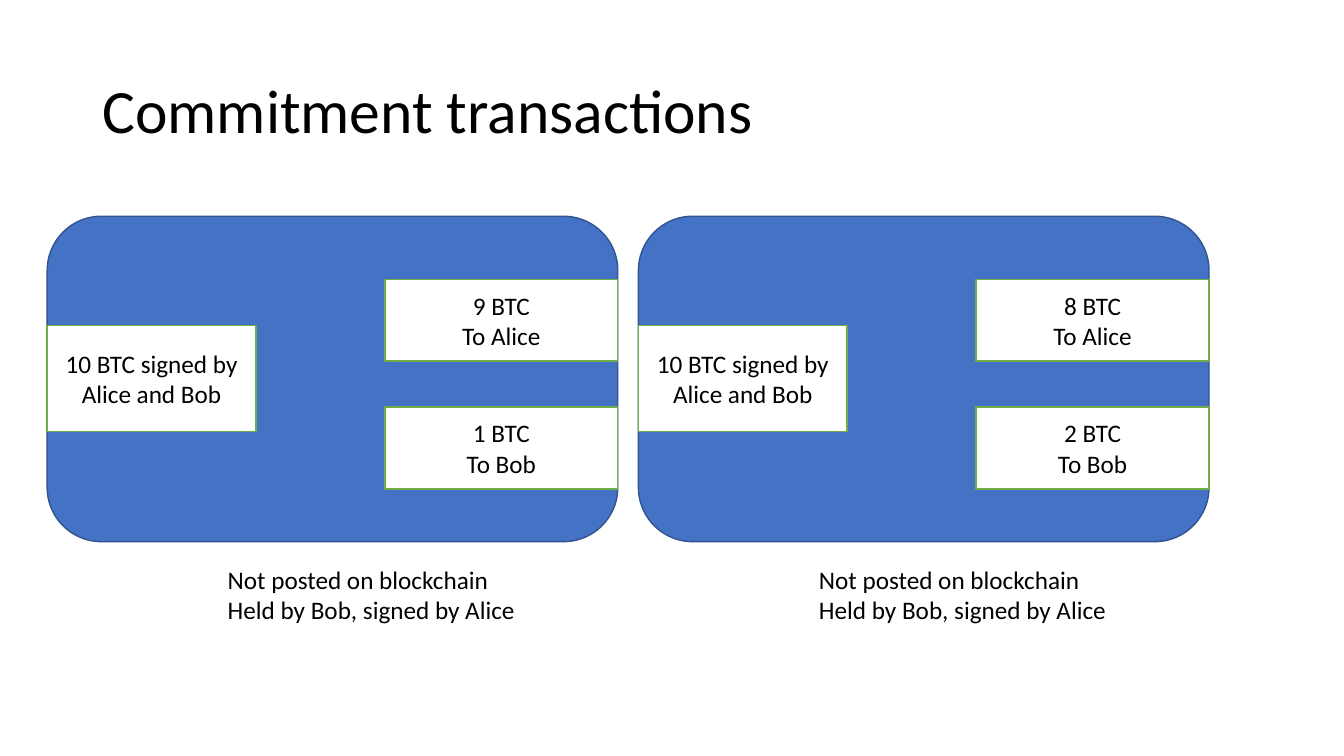
from pptx import Presentation
from pptx.dml.color import RGBColor
from pptx.enum.shapes import MSO_SHAPE as Shape
from pptx.enum.text import MSO_ANCHOR as Anchor, MSO_AUTO_SIZE as AutoSize, PP_ALIGN as Align
from pptx.util import Cm, Pt

BLACK = RGBColor(0x00, 0x00, 0x00)
WHITE = RGBColor(0xFF, 0xFF, 0xFF)
BLUE = RGBColor(0x44, 0x72, 0xC4)
DARK_BLUE = RGBColor(0x32, 0x54, 0x91)
GREEN = RGBColor(0x70, 0xAD, 0x47)


class SlideBuilder:
    """Holds the text style and the current slide."""

    font_name = "Calibri"
    text_size = Pt(18)
    title_size = Pt(44)

    def __init__(self, slide):
        self.slide = slide

    def set_text(self, frame, lines, size, align):
        frame.text = "\n".join(lines)
        for paragraph in frame.paragraphs:
            paragraph.alignment = align
            paragraph.font.name = self.font_name
            paragraph.font.size = size
            paragraph.font.color.rgb = BLACK

    def title(self, text, left, top, width, height):
        title = self.slide.shapes.title
        title.left, title.top, title.width, title.height = map(Cm, (left, top, width, height))
        frame = title.text_frame
        self.set_text(frame, [text], self.title_size, Align.LEFT)
        frame.vertical_anchor = Anchor.MIDDLE
        frame.paragraphs[0].line_spacing = 0.9

    def block(self, kind, fill, line, left, top, width, height):
        block = self.slide.shapes.add_shape(kind, Cm(left), Cm(top), Cm(width), Cm(height))
        block.shadow.inherit = False
        block.fill.solid()
        block.fill.fore_color.rgb = fill
        block.line.color.rgb = line
        block.line.width = Pt(1)
        return block

    def transaction(self, left, top, width, height):
        self.block(Shape.ROUNDED_RECTANGLE, BLUE, DARK_BLUE, left, top, width, height)

    def coin_box(self, lines, left, top, width, height):
        box = self.block(Shape.RECTANGLE, WHITE, GREEN, left, top, width, height)
        frame = box.text_frame
        frame.word_wrap = True
        frame.vertical_anchor = Anchor.MIDDLE
        self.set_text(frame, lines, self.text_size, Align.CENTER)

    def caption(self, lines, left, top, width, height):
        caption = self.slide.shapes.add_textbox(Cm(left), Cm(top), Cm(width), Cm(height))
        frame = caption.text_frame
        frame.word_wrap = False
        frame.auto_size = AutoSize.SHAPE_TO_FIT_TEXT
        self.set_text(frame, lines, self.text_size, Align.LEFT)


def main():
    deck = Presentation()
    deck.slide_width, deck.slide_height = Cm(33.87), Cm(19.05)
    builder = SlideBuilder(deck.slides.add_slide(deck.slide_layouts[5]))

    builder.title("Commitment transactions", 2.33, 1.01, 29.21, 3.68)

    # One transaction per pair of balances: (Alice, Bob)
    first_left, pitch = 1.19, 14.9
    for index, (alice, bob) in enumerate([(9, 1), (8, 2)]):
        left = first_left + index * pitch
        builder.transaction(left, 5.45, 14.38, 8.2)

        # Funding input on the left edge
        builder.coin_box(["10 BTC signed by Alice and Bob"], left, 8.2, 5.26, 2.67)

        # Outputs on the right edge
        for row, (amount, owner) in enumerate([(alice, "Alice"), (bob, "Bob")]):
            builder.coin_box([f"{amount} BTC", f"To {owner}"],
                             left + 8.51, 7.04 + row * 3.22, 5.87, 2.06)

        builder.caption(["Not posted on blockchain", "Held by Bob, signed by Alice"],
                        left + 4.3, 14.1, 7.85, 1.8)

    deck.save("out.pptx")


if __name__ == "__main__":
    main()
